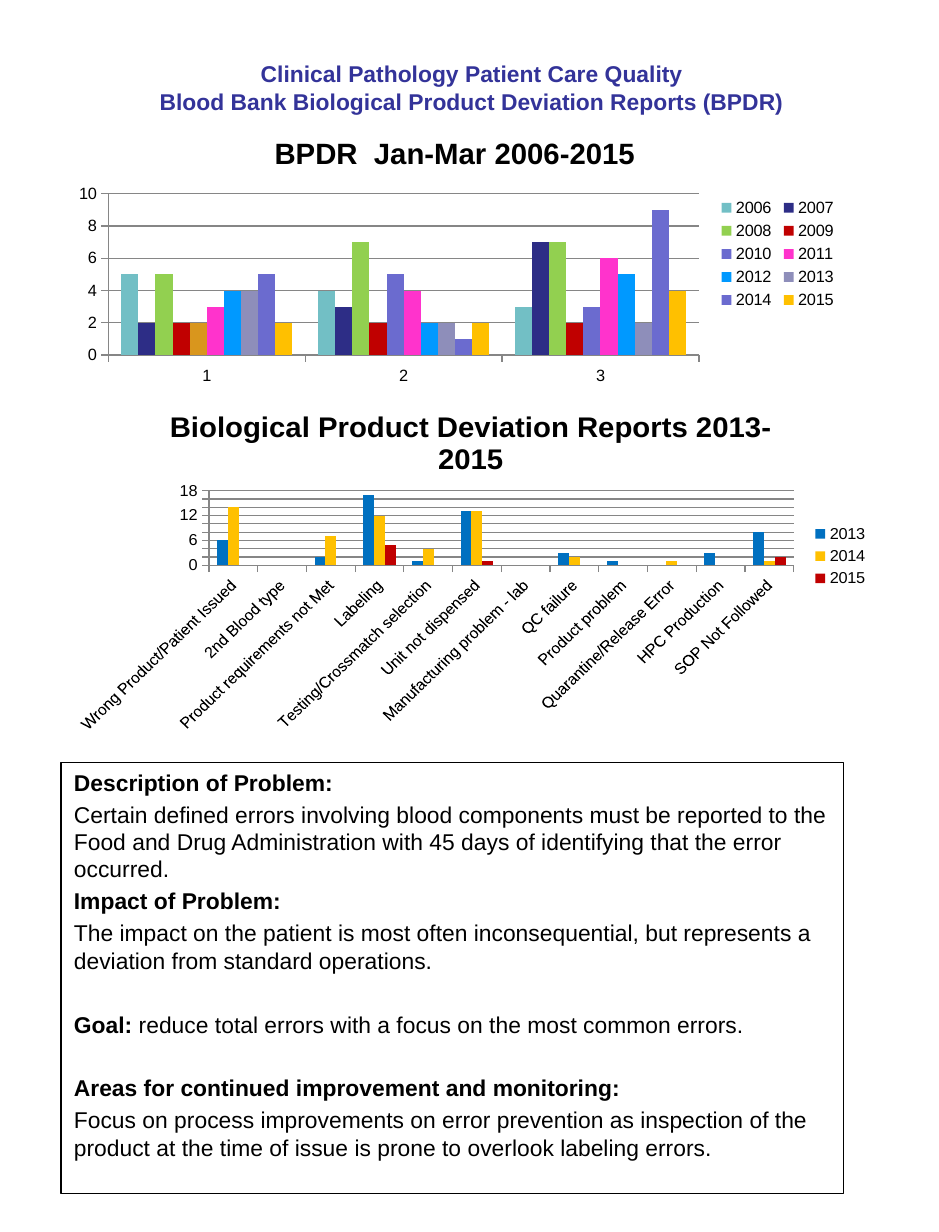
from lxml import etree
from pptx import Presentation
from pptx.chart.data import CategoryChartData
from pptx.dml.color import RGBColor
from pptx.enum.chart import XL_CHART_TYPE as ChartType, XL_LEGEND_POSITION as LegendPosition
from pptx.enum.chart import XL_TICK_MARK as TickMark
from pptx.enum.shapes import MSO_SHAPE as Shape
from pptx.enum.text import MSO_ANCHOR as Anchor, MSO_AUTO_SIZE as AutoSize, PP_ALIGN as Align
from pptx.oxml.ns import qn
from pptx.util import Inches, Pt

FONT = "Arial"
BLACK = RGBColor(0, 0, 0)
GRAY = RGBColor(0x86, 0x86, 0x86)
INDIGO = RGBColor(0x33, 0x33, 0x99)
NAVY = RGBColor(0x2D, 0x2D, 0x86)
TEAL = RGBColor(0x72, 0xBF, 0xC5)
GREEN = RGBColor(0x92, 0xD0, 0x50)
RED = RGBColor(0xC0, 0, 0)
VIOLET = RGBColor(0x6B, 0x6B, 0xCF)
OCHRE = RGBColor(0xD9, 0x96, 0x1D)
PINK = RGBColor(0xFF, 0x33, 0xCC)
SKY = RGBColor(0, 0x99, 0xFF)
LAVENDER = RGBColor(0x8E, 0x8E, 0xBA)
BLUE = RGBColor(0, 0x70, 0xC0)
GOLD = RGBColor(0xFF, 0xC0, 0)

TITLE = "Clinical Pathology Patient Care Quality\vBlood Bank Biological Product Deviation Reports (BPDR)"

CAUSES = {
    "title": "Biological Product Deviation Reports 2013-2015",
    "at": (0.52, 3.33, 6.98, 2.92),
    "categories": ["Wrong Product/Patient Issued", "2nd Blood type", "Product requirements not Met",
                   "Labeling", "Testing/Crossmatch selection", "Unit not dispensed",
                   "Manufacturing problem - lab", "QC failure", "Product problem",
                   "Quarantine/Release Error", "HPC Production", "SOP Not Followed"],
    "series": [
        ("2013", [6, None, 2, 17, 1, 13, None, 3, 1, None, 3, 8], BLUE),
        ("2014", [14, None, 7, 12, 4, 13, None, 2, None, 1, None, 1], GOLD),
        ("2015", [None, None, None, 5, None, 1, None, None, None, None, None, 2], RED),
    ],
    "maximum": 18,
    "rotation": -45,
    "overlay": False,
}
YEARS = {
    "title": "BPDR  Jan-Mar 2006-2015",
    "at": (0.52, 1, 6.71, 2.33),
    "categories": ["1", "2", "3"],
    "series": [
        ("2006", [5, 4, 3], TEAL), ("2007", [2, 3, 7], NAVY),
        ("2008", [5, 7, 7], GREEN), ("2009", [2, 2, 2], RED),
        ("2010", [2, 5, 3], VIOLET), ("2011", [3, 4, 6], PINK),
        ("2012", [4, 2, 5], SKY), ("2013", [4, 2, 2], LAVENDER),
        ("2014", [5, 1, 9], VIOLET), ("2015", [2, 2, 4], GOLD),
    ],
    "point_colors": {("2010", 0): OCHRE},
    "maximum": 10,
    "rotation": 0,
    "overlay": True,
    "plot": (0.06, 0.28, 0.75, 0.59),
    "legend": (0.83, 0.28, 0.16, 0.44),
}

CLOSE, APART = 2.8, 22.3
NOTES = [
    (CLOSE, [("Description of Problem:", True)]),
    (CLOSE, [("Certain defined errors involving blood components must be reported to the Food and Drug "
              "Administration with 45 days of identifying that the error occurred.", False)]),
    (CLOSE, [("Impact of Problem:", True)]),
    (CLOSE, [("The impact on the patient is most often inconsequential, but represents a deviation "
              "from standard operations.", False)]),
    (APART, [("Goal: ", True), ("reduce total errors with a focus on the most common errors.", False)]),
    (APART, [("Areas for continued improvement and monitoring:", True)]),
    (CLOSE, [("Focus on process improvements on error prevention as inspection of the product at the "
              "time of issue is prone to overlook labeling errors.", False)]),
]


def set_font(font, size, bold=False, color=BLACK):
    for name, value in {"name": FONT, "size": Pt(size), "bold": bold}.items():
        setattr(font, name, value)
    font.color.rgb = color


def format_frame(frame, anchor):
    settings = {"word_wrap": True, "auto_size": AutoSize.NONE, "vertical_anchor": anchor,
                "margin_left": Inches(0.11), "margin_right": Inches(0.11),
                "margin_top": Inches(0.05), "margin_bottom": Inches(0.05)}
    for name, value in settings.items():
        setattr(frame, name, value)


def place(shape, at):
    for name, value in zip(("left", "top", "width", "height"), at):
        setattr(shape, name, Inches(value))


def set_layout(element, fractions, inner=False):
    for old in element.findall(qn("c:layout")):
        element.remove(old)
    layout = etree.Element(qn("c:layout"))
    manual = etree.SubElement(layout, qn("c:manualLayout"))
    values = [("layoutTarget", "inner")] if inner else []
    values += [("xMode", "edge"), ("yMode", "edge"), *zip("xywh", fractions)]
    for tag, value in values:
        etree.SubElement(manual, qn(f"c:{tag}")).set("val", str(value))
    element.insert(0 if inner else 1, layout)


def add_column_chart(page, info):
    data = CategoryChartData()
    data.categories = info["categories"]
    for name, values, _ in info["series"]:
        data.add_series(name, values)
    chart = page.shapes.add_chart(ChartType.COLUMN_CLUSTERED, *map(Inches, info["at"]), data).chart
    set_font(chart.font, 10)

    chart.has_title = True
    heading = chart.chart_title
    heading.include_in_layout = info["overlay"]
    heading.text_frame.text = info["title"]
    set_font(heading.text_frame.paragraphs[0].runs[0].font, 18, True)

    plot = chart.plots[0]
    plot.gap_width, plot.overlap, plot.vary_by_categories = 150, 0, False
    for series, (name, _, color) in zip(plot.series, info["series"]):
        series.invert_if_negative = False
        series.format.fill.solid()
        series.format.fill.fore_color.rgb = color
        for (owner, index), point_color in info.get("point_colors", {}).items():
            if owner == name:
                fill = series.points[index].format.fill
                fill.solid()
                fill.fore_color.rgb = point_color

    value_axis, category_axis = chart.value_axis, chart.category_axis
    value_axis.minimum_scale, value_axis.maximum_scale, value_axis.major_unit = 0, info["maximum"], 2
    value_axis.has_major_gridlines = True
    for axis in (value_axis, category_axis):
        axis.major_tick_mark = TickMark.OUTSIDE
        set_font(axis.tick_labels.font, 10)
    for line in (value_axis.format.line, category_axis.format.line, value_axis.major_gridlines.format.line):
        line.color.rgb = GRAY
        line.width = Pt(0.75)
    body = category_axis._element.find(qn("c:txPr")).find(qn("a:bodyPr"))
    body.set("rot", str(info["rotation"] * 60000))

    chart.has_legend = True
    legend = chart.legend
    legend.position, legend.include_in_layout = LegendPosition.RIGHT, False
    set_font(legend.font, 10)
    if "legend" in info:
        set_layout(legend._element, info["legend"])
    if "plot" in info:
        set_layout(chart._chartSpace.chart.plotArea, info["plot"], inner=True)


def add_notes(page):
    box = page.shapes.add_shape(Shape.RECTANGLE, 0, 0, 0, 0)
    place(box, (0.52, 6.5, 6.67, 3.67))
    box.shadow.inherit = False
    box.fill.background()
    box.line.color.rgb = BLACK
    box.line.width = Pt(0.75)
    frame = box.text_frame
    format_frame(frame, Anchor.TOP)
    for index, (space, spans) in enumerate(NOTES):
        para = frame.add_paragraph() if index else frame.paragraphs[0]
        para.alignment = Align.LEFT
        para.space_before = Pt(space)
        for text, bold in spans:
            span = para.add_run()
            span.text = text
            set_font(span.font, 14, bold)


def main():
    deck = Presentation()
    deck.slide_width, deck.slide_height = Inches(8), Inches(10.5)
    page = deck.slides.add_slide(deck.slide_layouts[5])
    title = page.shapes.title
    place(title, (0.42, 0.5, 7.2, 0.49))
    format_frame(title.text_frame, Anchor.MIDDLE)
    title.text_frame.text = TITLE
    para = title.text_frame.paragraphs[0]
    para.alignment = Align.CENTER
    for span in para.runs:
        set_font(span.font, 14, True, INDIGO)
    add_notes(page)
    for info in (CAUSES, YEARS):
        add_column_chart(page, info)
    deck.save("out.pptx")


if __name__ == "__main__":
    main()
